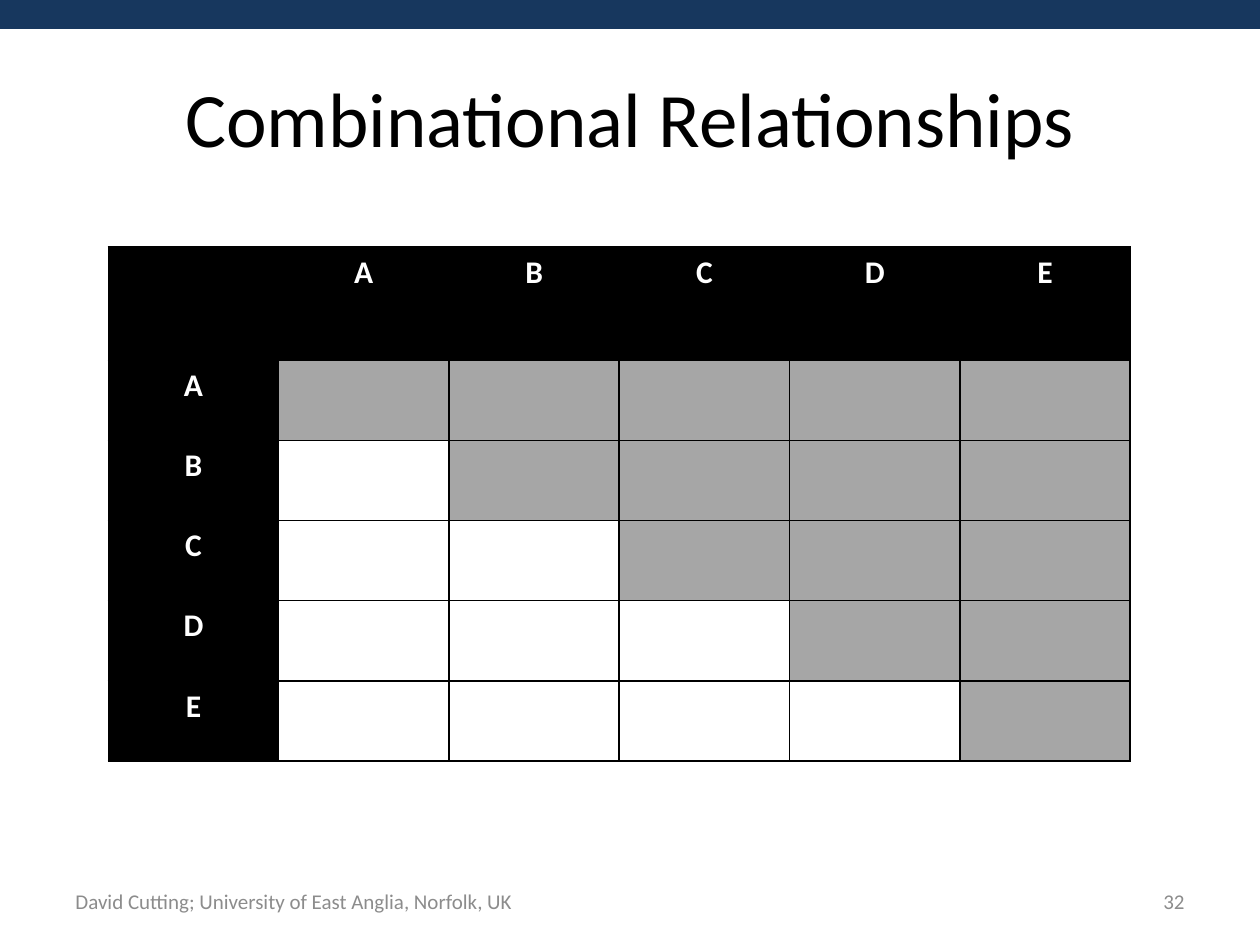
from lxml import etree
from pptx import Presentation
from pptx.dml.color import RGBColor
from pptx.enum import shapes, text
from pptx.oxml import ns
from pptx.util import Inches, Pt

NAVY = RGBColor(0x17, 0x37, 0x5E)
BLACK = RGBColor(0x00, 0x00, 0x00)
WHITE = RGBColor(0xFF, 0xFF, 0xFF)
SHADED = RGBColor(0xA6, 0xA6, 0xA6)
FOOTER_GREY = RGBColor(0x8C, 0x8C, 0x8C)
FONT = "Calibri"
ITEMS = "ABCDE"


def style(paragraph, size, color, align, bold=False):
    paragraph.alignment = align
    paragraph.font.name = FONT
    paragraph.font.size = Pt(size)
    paragraph.font.bold = bold
    paragraph.font.color.rgb = color


def add_top_band(slide, left, top, width, height):
    band = slide.shapes.add_shape(
        shapes.MSO_SHAPE.RECTANGLE, left, top, width, height)
    band.shadow.inherit = False
    band.fill.solid()
    band.fill.fore_color.rgb = NAVY
    band.line.fill.background()


def place_title(slide, left, top, width, height):
    title = slide.shapes.title
    title.left, title.top, title.width, title.height = left, top, width, height
    title.text_frame.text = "Combinational Relationships"
    title.text_frame.vertical_anchor = text.MSO_ANCHOR.MIDDLE
    style(title.text_frame.paragraphs[0], 44, BLACK, text.PP_ALIGN.CENTER)


def add_footer(slide, left, top, width, height):
    number_width = Inches(2.33)
    credit_width = Inches(6.08)
    parts = (
        ("David Cutting; University of East Anglia, Norfolk, UK",
         left, credit_width, text.PP_ALIGN.LEFT),
        ("32", left + width - number_width, number_width, text.PP_ALIGN.RIGHT),
    )
    for words, part_left, part_width, align in parts:
        frame = slide.shapes.add_textbox(
            part_left, top, part_width, height).text_frame
        frame.word_wrap = True
        frame.vertical_anchor = text.MSO_ANCHOR.MIDDLE
        frame.text = words
        style(frame.paragraphs[0], 12, FOOTER_GREY, align)


def add_borders(cell):
    properties = cell._tc.get_or_add_tcPr()
    for side in ("a:lnL", "a:lnR", "a:lnT", "a:lnB"):
        border = etree.SubElement(properties, ns.qn(side), w=str(Pt(1)))
        fill = etree.SubElement(border, ns.qn("a:solidFill"))
        etree.SubElement(fill, ns.qn("a:srgbClr"), val=str(BLACK))


def add_relationship_matrix(slide, left, top, width, height):
    count = len(ITEMS) + 1
    header_height = Inches(0.9)
    matrix = slide.shapes.add_table(
        count, count, left, top, width, height).table
    for row in matrix.rows:
        row.height = (height - header_height) // len(ITEMS)
    matrix.rows[0].height = header_height

    labels = " " + ITEMS
    for row in range(count):
        for column in range(count):
            cell = matrix.cell(row, column)
            is_header = row == 0 or column == 0
            add_borders(cell)
            cell.fill.solid()
            if is_header:
                cell.fill.fore_color.rgb = BLACK
            else:
                cell.fill.fore_color.rgb = SHADED if column >= row else WHITE
            if is_header and row != column:
                cell.text = labels[max(row, column)]
                style(cell.text_frame.paragraphs[0], 18, WHITE,
                      text.PP_ALIGN.CENTER, bold=True)


def main():
    deck = Presentation()
    deck.slide_width, deck.slide_height = Inches(10), Inches(7.5)
    slide = deck.slides.add_slide(deck.slide_layouts[5])
    add_top_band(slide, 0, Inches(-0.01), deck.slide_width, Inches(0.24))
    place_title(slide, Inches(0.5), Inches(0.3), Inches(9), Inches(1.25))
    add_footer(slide, Inches(0.5), Inches(6.95), Inches(9), Inches(0.4))
    add_relationship_matrix(
        slide, Inches(0.86), Inches(1.96), Inches(8.11), Inches(4.08))
    deck.save("out.pptx")


if __name__ == "__main__":
    main()
